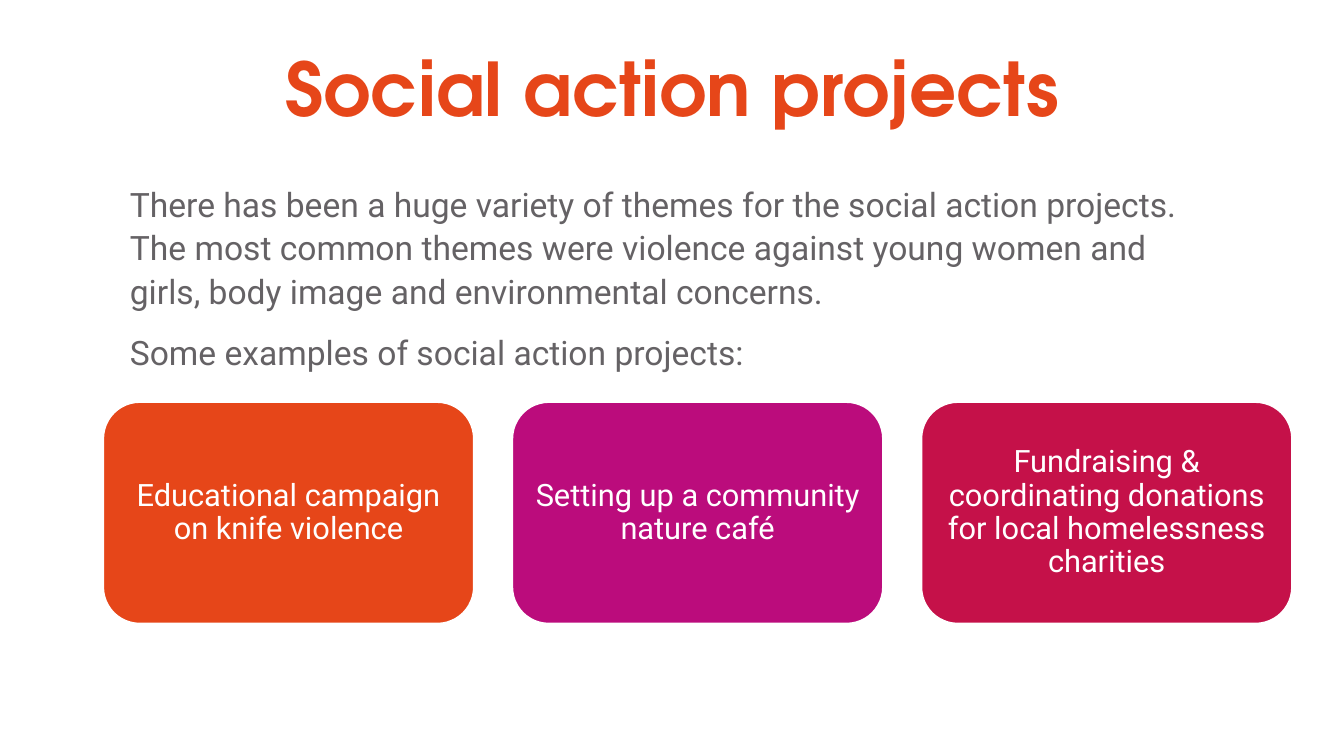
from pptx import Presentation
from pptx.dml.color import RGBColor
from pptx.enum.shapes import MSO_SHAPE
from pptx.enum.text import MSO_ANCHOR, PP_ALIGN
from pptx.util import Pt

ROUND = MSO_SHAPE.ROUNDED_RECTANGLE
TOP, MIDDLE = MSO_ANCHOR.TOP, MSO_ANCHOR.MIDDLE
LEFT, CENTER = PP_ALIGN.LEFT, PP_ALIGN.CENTER

TITLE = "Social action projects"
INTRO = [
    "There has been a huge variety of themes for the social action projects. "
    "The most common themes were violence against young women and girls, "
    "body image and environmental concerns.",
    "Some examples of social action projects:",
]
CARDS = [
    ("Educational campaign on knife violence", "orange"),
    ("Setting up a community nature café", "purple"),
    ("Fundraising & coordinating donations for local homelessness charities",
     "red"),
]

THEME = {
    "orange": "E64619", "purple": "BB0C7C", "red": "C51149",
    "grey": "656265", "white": "FFFFFF",
    "head": "TeX Gyre Adventor", "body": "Roboto",
    "title": 52.8, "intro": 24, "card": 22,
}

WIDE, HIGH = 960, 540
TITLE_BOX = (90.7, 17.3, 778.3, 90)
INTRO_BOX = (85.7, 126, 778.3, 106.6)
CARD_X, CARD_Y, CARD_W, CARD_H = 73.4, 286.8, 265.5, 159
CARD_STEP = 292.2


def color(name):
    return RGBColor.from_string(THEME[name])


def write(shape, lines, *, size, ink, font="body", bold=False, align=LEFT,
          anchor=TOP, space=1, before=0, after=0, inset=None):
    frame = shape.text_frame
    frame.word_wrap = True
    frame.vertical_anchor = anchor
    if inset is not None:
        frame.margin_left = frame.margin_right = Pt(inset)
        frame.margin_top = frame.margin_bottom = Pt(inset)
    for i, line in enumerate(lines):
        para = frame.add_paragraph() if i else frame.paragraphs[0]
        para.alignment = align
        para.line_spacing = space
        para.space_before = Pt(before if i else 0)
        para.space_after = Pt(after)
        run = para.add_run()
        run.text = line
        run.font.name = THEME[font]
        run.font.size = Pt(THEME[size])
        run.font.bold = bold
        run.font.color.rgb = color(ink)


def add_card(slide, rank, text, fill):
    left = CARD_X + rank * CARD_STEP
    card = slide.shapes.add_shape(
        ROUND, Pt(left), Pt(CARD_Y), Pt(CARD_W), Pt(CARD_H))
    card.shadow.inherit = False
    card.fill.solid()
    card.fill.fore_color.rgb = color(fill)
    card.line.color.rgb = color("white")
    card.line.width = Pt(2)
    write(card, [text], size="card", ink="white", align=CENTER,
          anchor=MIDDLE, space=0.9, inset=6.6)


def main():
    deck = Presentation()
    deck.slide_width, deck.slide_height = Pt(WIDE), Pt(HIGH)
    slide = deck.slides.add_slide(deck.slide_layouts[5])

    title = slide.shapes.title
    title.left, title.top, title.width, title.height = map(Pt, TITLE_BOX)
    write(title, [TITLE], size="title", ink="orange", font="head", bold=True,
          align=CENTER, anchor=MIDDLE)

    intro = slide.shapes.add_textbox(*map(Pt, INTRO_BOX))
    write(intro, INTRO, size="intro", ink="grey", space=1.07, before=4.8,
          after=8)

    for rank, (text, fill) in enumerate(CARDS):
        add_card(slide, rank, text, fill)

    deck.save("out.pptx")


if __name__ == "__main__":
    main()
